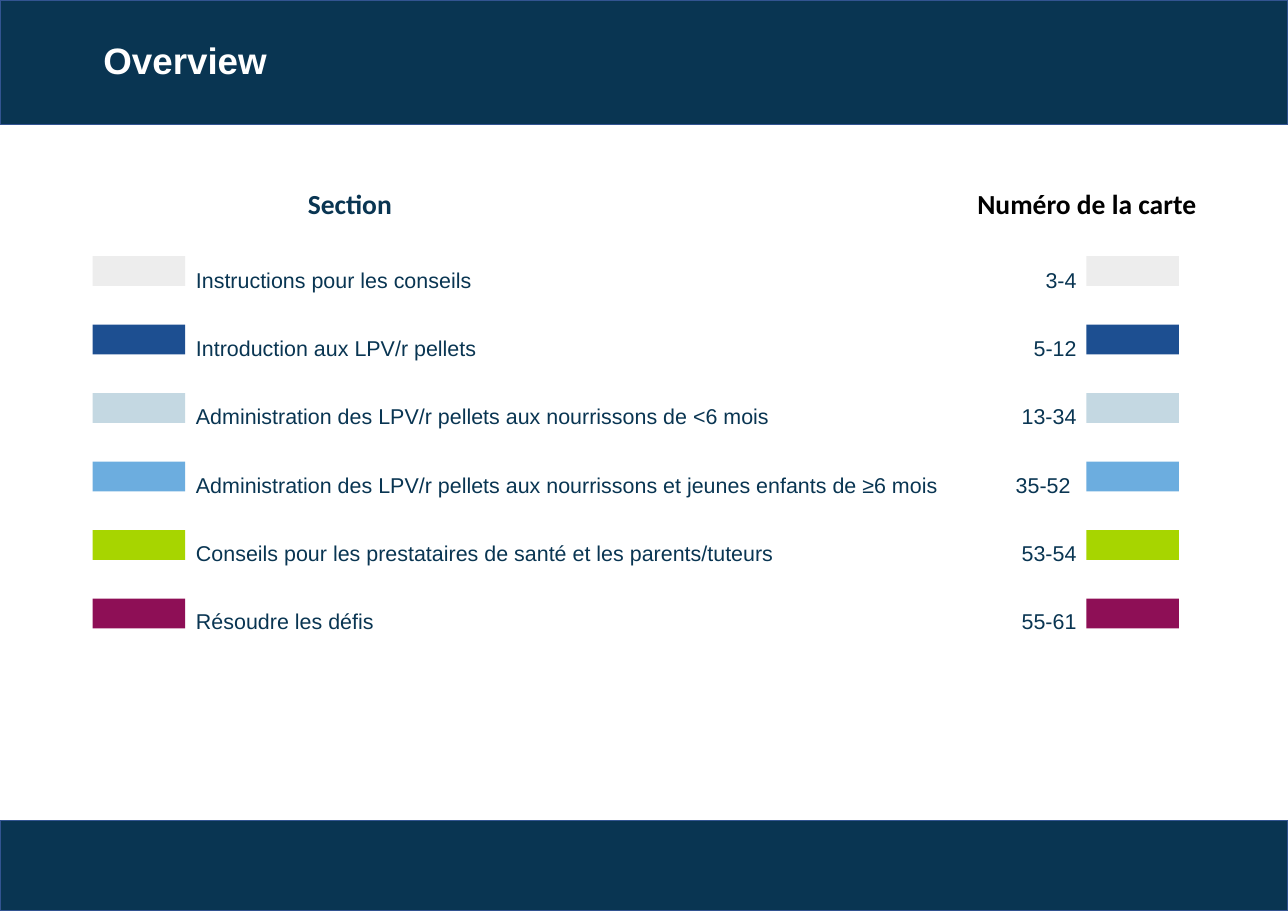
from dataclasses import dataclass

from pptx import Presentation
from pptx import util as u
from pptx.dml.color import RGBColor
from pptx.enum import shapes, text

WIDTH, HEIGHT = 11.69, 8.27


@dataclass(frozen=True)
class Theme:
    navy: str = "093552"
    band_line: str = "325491"
    white: str = "FFFFFF"
    black: str = "000000"
    body_font: str = "Arial"
    heading_font: str = "Calibri"
    title_size: int = 24
    heading_size: int = 18
    body_size: int = 14


SECTIONS = [
    ("Instructions pour les conseils", "3-4", "EDEDED"),
    ("Introduction aux LPV/r pellets", "5-12", "1D4F91"),
    ("Administration des LPV/r pellets aux nourrissons de <6 mois", "13-34", "C4D8E2"),
    ("Administration des LPV/r pellets aux nourrissons et jeunes enfants de ≥6 mois",
     "35-52 ", "6CADDF"),
    ("Conseils pour les prestataires de santé et les parents/tuteurs", "53-54", "A7D500"),
    ("Résoudre les défis", "55-61", "8E0F56"),
]


class OverviewPage:
    def __init__(self, page, theme):
        self.page = page
        self.theme = theme

    def rectangle(self, left, top, width, height, fill, line=None):
        box = self.page.shapes.add_shape(
            shapes.MSO_SHAPE.RECTANGLE,
            *map(u.Inches, (left, top, width, height)))
        box.shadow.inherit = False
        box.fill.solid()
        box.fill.fore_color.rgb = RGBColor.from_string(fill)
        if line:
            box.line.color.rgb = RGBColor.from_string(line)
            box.line.width = u.Pt(1)
        else:
            box.line.fill.background()

    def band(self, top, height):
        self.rectangle(0, top, WIDTH, height, self.theme.navy, self.theme.band_line)

    def text_box(self, left, top, width, height, lines, size, color, font,
                 bold=False, align=text.PP_ALIGN.LEFT, spacing=1.0, gap=0,
                 anchor=text.MSO_ANCHOR.TOP):
        """Add one paragraph per line, with gap points between paragraphs."""
        box = self.page.shapes.add_textbox(*map(u.Inches, (left, top, width, height)))
        frame = box.text_frame
        frame.word_wrap = True
        frame.vertical_anchor = anchor
        frame.text = "\n".join(lines)
        for index, para in enumerate(frame.paragraphs):
            para.alignment = align
            para.line_spacing = spacing
            para.space_before = u.Pt(gap if index else 0)
            para.font.name = font
            para.font.size = u.Pt(size)
            para.font.bold = bold
            para.font.color.rgb = RGBColor.from_string(color)

    def title(self, wording):
        self.text_box(0.84, 0, 10.05, 1.13, [wording], self.theme.title_size,
                      self.theme.white, self.theme.body_font, bold=True,
                      spacing=0.9, anchor=text.MSO_ANCHOR.MIDDLE)

    def heading(self, left, wording, color):
        self.text_box(left, 1.65, 3.17, 0.42, [wording], self.theme.heading_size,
                      color, self.theme.heading_font, bold=True,
                      align=text.PP_ALIGN.CENTER)

    def column(self, left, width, height, lines, align):
        self.text_box(left, 2.14, width, height, lines, self.theme.body_size,
                      self.theme.navy, self.theme.body_font, align=align,
                      spacing=2.0, gap=11)

    def swatches(self, left, colors):
        for row, color in enumerate(colors):
            self.rectangle(left, 2.325 + row * 0.622, 0.84, 0.27, color)


def main():
    deck = Presentation()
    deck.slide_width, deck.slide_height = u.Inches(WIDTH), u.Inches(HEIGHT)
    theme = Theme()
    overview = OverviewPage(deck.slides.add_slide(deck.slide_layouts[6]), theme)
    names, cards, colors = zip(*SECTIONS)

    overview.band(0, 1.13)
    overview.band(7.45, 0.82)
    overview.title("Overview")
    overview.heading(1.59, "Section", theme.navy)
    overview.heading(8.28, "Numéro de la carte", theme.black)
    overview.column(1.68, 8.01, 4.02, names, text.PP_ALIGN.LEFT)
    overview.column(7.86, 2.01, 5.25, cards, text.PP_ALIGN.RIGHT)
    for left in (0.84, 9.86):
        overview.swatches(left, colors)

    deck.save("out.pptx")


if __name__ == "__main__":
    main()
